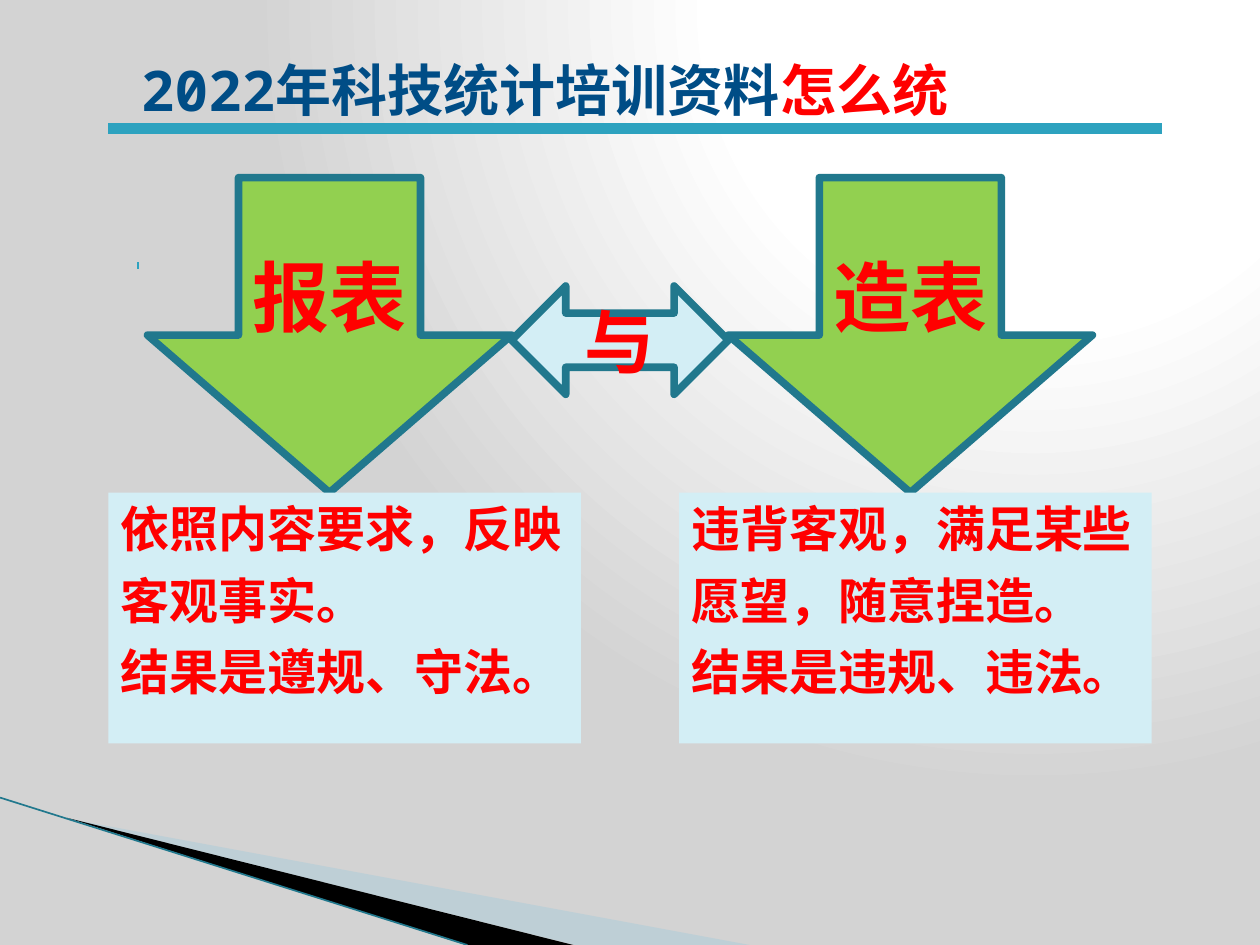
from lxml import etree
from pptx import Presentation
from pptx.dml.color import RGBColor
from pptx.enum.shapes import MSO_CONNECTOR, MSO_SHAPE
from pptx.enum.text import MSO_ANCHOR, PP_ALIGN
from pptx.oxml import parse_xml
from pptx.oxml.ns import nsdecls, qn
from pptx.util import Inches, Pt

DOWN, BOTH, RECT = MSO_SHAPE.DOWN_ARROW, MSO_SHAPE.LEFT_RIGHT_ARROW, MSO_SHAPE.RECTANGLE
TOP, MIDDLE = MSO_ANCHOR.TOP, MSO_ANCHOR.MIDDLE
LEFT, CENTER = PP_ALIGN.LEFT, PP_ALIGN.CENTER
MONO, CJK = "Noto Sans Mono", "Noto Sans CJK SC"
RED, NAVY, GREEN, PALE = "FF0000", "004D86", "92D050", "D3EEF5"
TEAL, DARK_TEAL = "2DA2BF", "21788D"

TITLE = [("2022年科技统计培训资料", NAVY), ("怎么统", RED)]
ARROWS = [  # shape, text, size, fill, box
    (DOWN, "报表", 44, GREEN, (1.17, 1.41, 2.89, 2.5)),
    (DOWN, "造表", 44, GREEN, (5.78, 1.41, 2.89, 2.5)),
    (BOTH, "与", 40, PALE, (4.06, 2.27, 1.72, 0.86)),
]
NOTES = [  # left, lines
    (0.86, ["依照内容要求，反映", "客观事实。", "结果是遵规、守法。"]),
    (5.39, ["违背客观，满足某些", "愿望，随意捏造。", "结果是违规、违法。"]),
]
WEDGES = [  # points, fill, opacity in percent
    ([(0.55, 6.5), (5.95, 7.5), (4.56, 7.5)], "A0CBDC", 40),
    ([(0.53, 6.49), (4.55, 7.5), (3.7, 7.5)], "000000", 100),
]
LINES = [  # start, end, colour, width
    ((0, 6.33), (3.71, 7.5), DARK_TEAL, 0.95),
    ((1.09, 2.11), (1.1, 2.11), TEAL, 4),
    ((0.86, 1.02), (9.22, 1.02), TEAL, 6),
]


def rgb(value):
    return RGBColor.from_string(value)


def set_background(slide):
    """Radial gradient with its centre near the top right."""
    slide.background.fill.solid()
    bg = slide.background._cSld.find(qn("p:bg")).find(qn("p:bgPr"))
    stops = "".join(f'<a:gs pos="{pos}000"><a:srgbClr val="{color}"/></a:gs>'
                    for pos, color in [(0, "FFFFFF"), (40, "FFFFFF"), (100, "D3D3D3")])
    bg.replace(bg.find(qn("a:solidFill")), parse_xml(
        f'<a:gradFill {nsdecls("a")} rotWithShape="1"><a:gsLst>{stops}</a:gsLst>'
        '<a:path path="circle"><a:fillToRect l="65000" t="0" r="0" b="98000"/></a:path>'
        '</a:gradFill>'))


def add_text(sp, paragraphs, size, font=MONO, align=CENTER, anchor=MIDDLE, before=0):
    """Each paragraph is a list of (text, colour) runs."""
    tf = sp.text_frame
    tf.word_wrap = True
    tf.vertical_anchor = anchor
    for i, runs in enumerate(paragraphs):
        p = tf.paragraphs[0] if i == 0 else tf.add_paragraph()
        p.alignment = align
        p.space_before = Pt(before if i else 0)
        for text, color in runs:
            r = p.add_run()
            r.text = text
            r.font.size, r.font.bold, r.font.name = Pt(size), True, font
            r.font.color.rgb = rgb(color)
            etree.SubElement(r._r.get_or_add_rPr(), qn("a:ea"), typeface=CJK)


def add_shape(slide, kind, box, fill, line=None):
    sp = slide.shapes.add_shape(kind, *map(Inches, box))
    sp.shadow.inherit = False
    sp.fill.solid()
    sp.fill.fore_color.rgb = rgb(fill)
    if line:
        sp.line.color.rgb = rgb(line)
        sp.line.width = Pt(4.33)
    else:
        sp.line.fill.background()
    return sp


def add_wedge(slide, points, fill, opacity):
    start, *rest = [(Inches(x), Inches(y)) for x, y in points]
    builder = slide.shapes.build_freeform(*start)
    builder.add_line_segments(rest, close=True)
    sp = builder.convert_to_shape()
    sp.shadow.inherit = False
    sp.fill.solid()
    sp.fill.fore_color.rgb = rgb(fill)
    sp.line.fill.background()
    if opacity < 100:
        color = sp._element.spPr.find(qn("a:solidFill"))[0]
        etree.SubElement(color, qn("a:alpha"), val=str(opacity * 1000))


def add_line(slide, start, end, color, width):
    line = slide.shapes.add_connector(MSO_CONNECTOR.STRAIGHT, *map(Inches, start + end))
    line.line.color.rgb = rgb(color)
    line.line.width = Pt(width)
    etree.SubElement(line._element.spPr, qn("a:effectLst"))


def main():
    prs = Presentation()
    prs.slide_width, prs.slide_height = Inches(10), Inches(7.5)
    slide = prs.slides.add_slide(prs.slide_layouts[5])
    set_background(slide)

    for wedge in WEDGES:
        add_wedge(slide, *wedge)
    for line in LINES:
        add_line(slide, *line)

    title = slide.shapes.title
    title.left, title.top, title.width, title.height = map(Inches, (1.02, 0.39, 7.19, 0.64))
    add_text(title, [TITLE], 32, align=LEFT, anchor=TOP)

    for kind, text, size, fill, box in ARROWS:
        sp = add_shape(slide, kind, box, fill, DARK_TEAL)
        add_text(sp, [[(text, RED)]], size)
    for left, lines in NOTES:
        sp = add_shape(slide, RECT, (left, 3.91, 3.75, 1.99), PALE)
        add_text(sp, [[(line, RED)] for line in lines], 28, font=CJK,
                 align=LEFT, anchor=TOP, before=7.2)

    prs.save("out.pptx")


if __name__ == "__main__":
    main()
